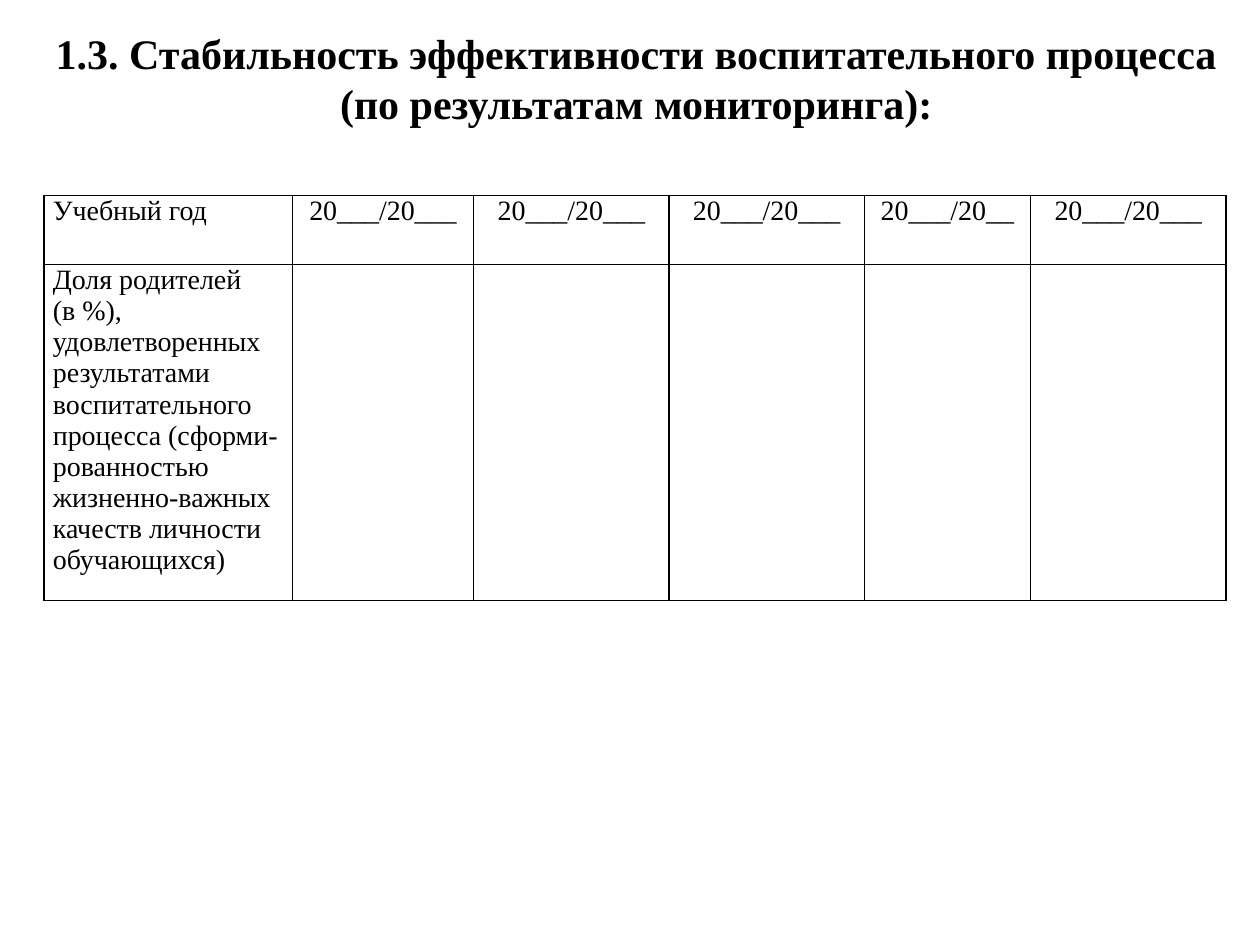
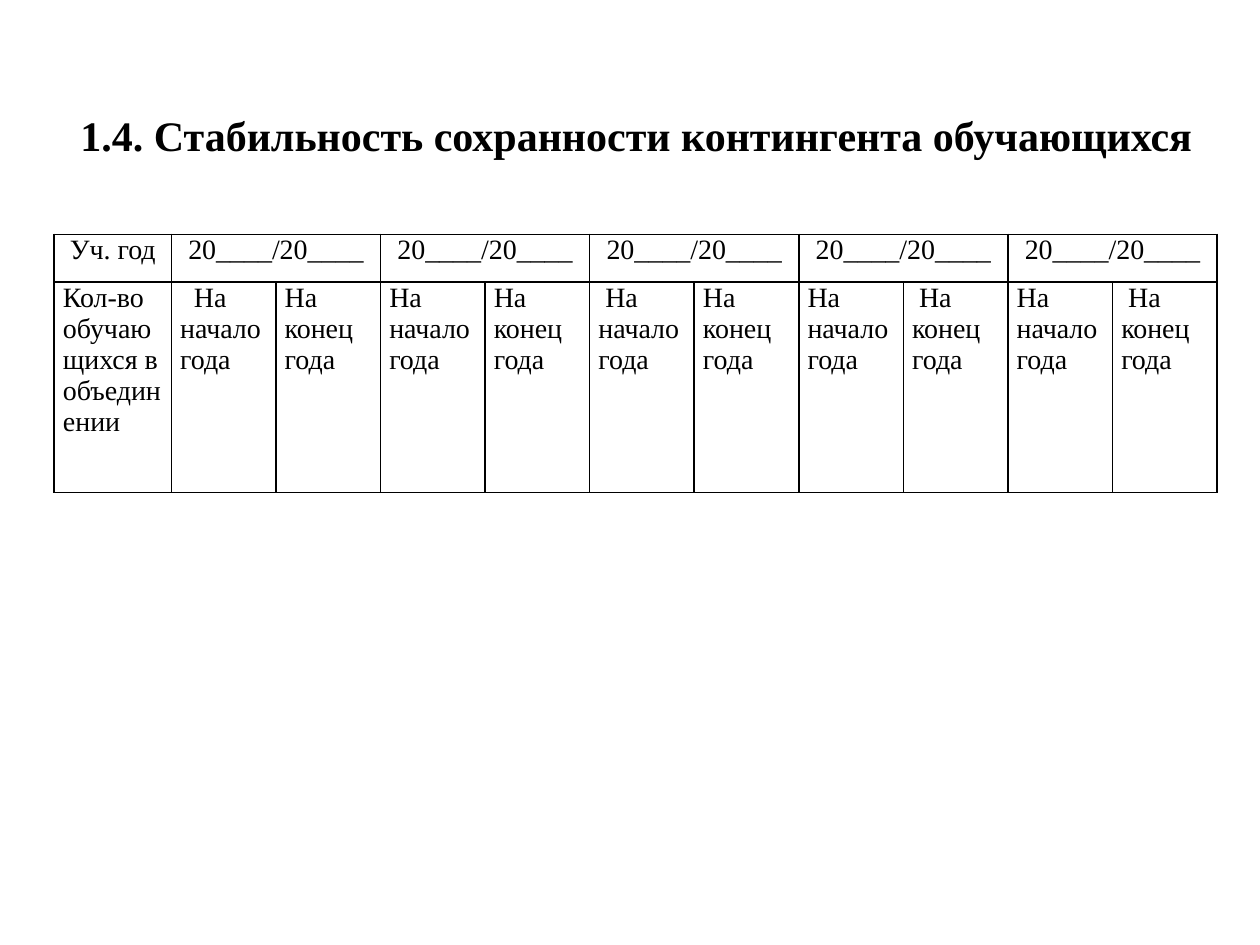
from copy import deepcopy

from lxml.etree import SubElement
from pptx import Presentation
from pptx.dml.color import RGBColor
from pptx.enum.text import MSO_ANCHOR, MSO_AUTO_SIZE, PP_ALIGN
from pptx.oxml.ns import qn
from pptx.util import Inches, Pt

WIDE, HIGH = 10, 7.5
FONT = "Times New Roman"
COLORS = {"ink": "000000"}
SPACE = 0.055  # width of one blank at 16 pt, inches
LEFT, MID = PP_ALIGN.LEFT, PP_ALIGN.CENTER

# A cell is (text, align, first-line indent in blanks, columns spanned).
YEAR = "20___/20___"
PAIR = ("20____/20____", MID, 0, 2)
START, END = "На начало года", "На конец года"
SHIFTS = [2, 0, 0, 0, 1, 0, 0, 1, 0, 1]

PAGES = [
    {
        "title": "1.3. Стабильность эффективности воспитательного процесса "
                 "(по результатам мониторинга):",
        "box": (0.16, 0.91),
        "at": (0.35, 1.55),
        "cols": [1.97, 1.44, 1.55, 1.55, 1.32, 1.55],
        "rows": [0.55, 2.47],
        "cells": [
            [("Учебный год", LEFT, 0, 1)]
            + [(year, MID, 0, 1) for year in [YEAR] * 3 + ["20___/20__", YEAR]],
            [("Доля родителей\n(в %), удовлетворенных результатами "
              "воспитательного процесса (сформи-рованностью "
              "жизненно-важных качеств личности обучающихся)", LEFT, 0, 1)],
        ],
    },
    {
        "title": "1.4. Стабильность сохранности контингента обучающихся",
        "box": (0.82, 0.5),
        "at": (0.43, 1.86),
        "cols": [0.93] + [0.83] * 10,
        "rows": [0.38, 1.67],
        "cells": [
            [("Уч. год", LEFT, 1, 1)] + [PAIR] * 5,
            [("Кол-во обучающихся в объединении", LEFT, 0, 1)]
            + [(text, LEFT, shift, 1)
               for text, shift in zip([START, END] * 5, SHIFTS)],
        ],
    },
]


def write(frame, text, size=16, bold=False, align=LEFT, indent=0):
    """Fill the first paragraph; a newline in the text is a line break."""
    para = frame.paragraphs[0]
    para.text = text
    para.alignment = align
    if indent:
        props = para._p.get_or_add_pPr()
        props.set("marL", "0")
        props.set("indent", str(Inches(indent)))
    for run in para.runs:
        font = run.font
        font.name, font.size, font.bold = FONT, Pt(size), bold
        font.color.rgb = RGBColor.from_string(COLORS["ink"])
    for brk in para._p.findall(qn("a:br")):
        brk.insert(0, deepcopy(para.runs[0]._r.rPr))


def add_title(slide, text, top, height):
    side = WIDE * 0.02
    box = slide.shapes.add_textbox(Inches(side), Inches(top),
                                   Inches(WIDE * 0.97), Inches(height))
    frame = box.text_frame
    frame.word_wrap = True
    frame.auto_size = MSO_AUTO_SIZE.SHAPE_TO_FIT_TEXT
    frame.vertical_anchor = MSO_ANCHOR.MIDDLE
    write(frame, text, size=24, bold=True, align=MID)


def style(cell):
    """Clear the fill, set the margins and draw four thin borders."""
    cell.margin_left = cell.margin_right = Inches(0.07)
    cell.margin_top = cell.margin_bottom = 0
    props = cell._tc.get_or_add_tcPr()
    for edge in ("lnL", "lnR", "lnT", "lnB"):
        line = SubElement(props, qn("a:" + edge), w=str(Pt(1)))
        fill = SubElement(line, qn("a:solidFill"))
        SubElement(fill, qn("a:srgbClr"), val=COLORS["ink"])
    cell.fill.background()


def add_grid(slide, at, cols, rows, cells):
    left, top = at
    table = slide.shapes.add_table(
        len(rows), len(cols), Inches(left), Inches(top),
        Inches(sum(cols)), Inches(sum(rows))).table
    table.first_row = table.horz_banding = False
    for col, width in zip(table.columns, cols):
        col.width = Inches(width)
    for row, height in zip(table.rows, rows):
        row.height = Inches(height)
    for cell in table.iter_cells():
        style(cell)
    for y, line in enumerate(cells):
        x = 0
        for text, align, blanks, span in line:
            cell = table.cell(y, x)
            if span > 1:
                cell.merge(table.cell(y, x + span - 1))
            write(cell.text_frame, text, align=align, indent=blanks * SPACE)
            x += span


def main():
    deck = Presentation()
    deck.slide_width, deck.slide_height = Inches(WIDE), Inches(HIGH)
    for page in PAGES:
        slide = deck.slides.add_slide(deck.slide_layouts[6])
        add_title(slide, page["title"], *page["box"])
        add_grid(slide, page["at"], page["cols"], page["rows"], page["cells"])
    deck.save("out.pptx")


if __name__ == "__main__":
    main()
